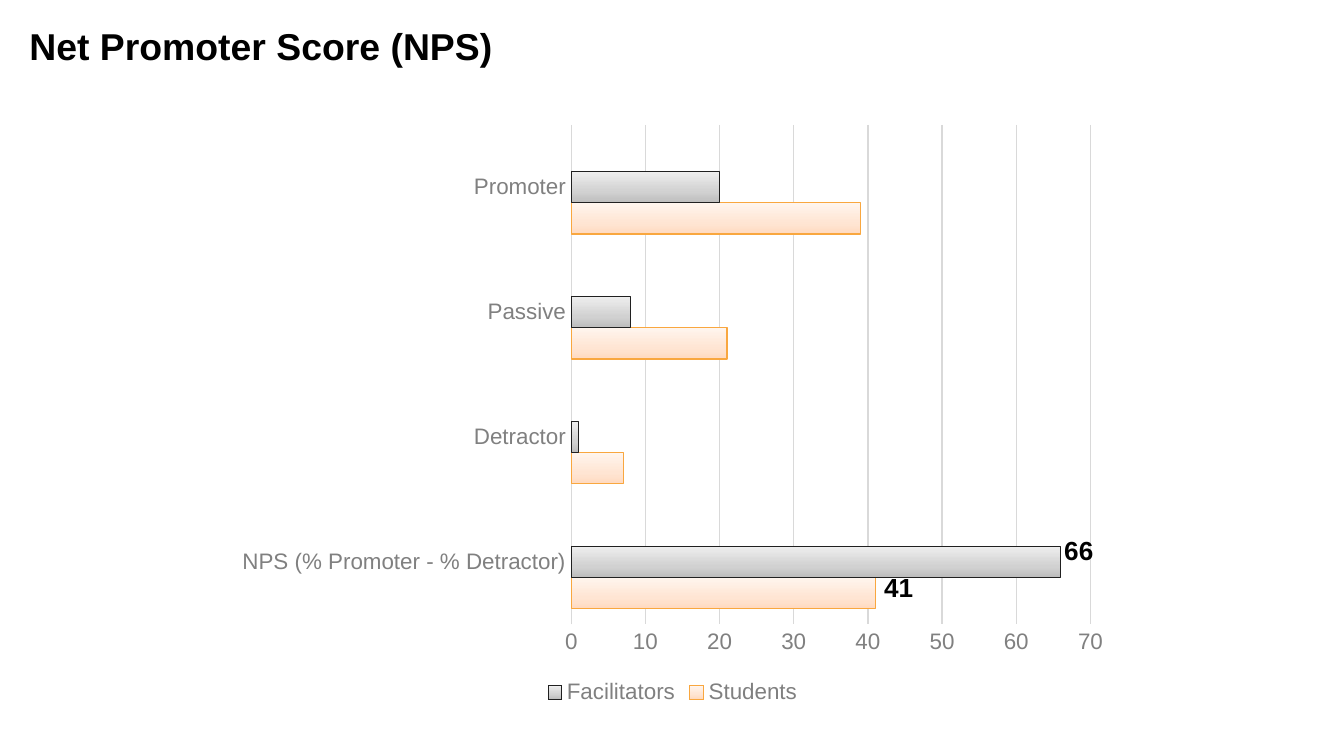
from copy import deepcopy
from dataclasses import dataclass

from pptx import Presentation
from pptx.chart.chart import Chart
from pptx.chart.data import CategoryChartData
from pptx.chart.series import BarSeries
from pptx.dml.color import RGBColor
from pptx.enum.chart import XL_CHART_TYPE as ChartType
from pptx.enum.chart import XL_LEGEND_POSITION as LegendPosition
from pptx.enum.chart import XL_TICK_MARK as TickMark
from pptx.oxml import parse_xml
from pptx.oxml.ns import nsdecls, qn
from pptx.slide import Slide
from pptx.text.text import Font
from pptx.util import Inches, Pt

FONT = "Arial"
BLACK = RGBColor(0x00, 0x00, 0x00)
GRAY = RGBColor(0x80, 0x80, 0x80)
GRID = RGBColor(0xD9, 0xD9, 0xD9)
PEACH = (RGBColor(0xFF, 0xDA, 0xC0), RGBColor(0xFF, 0xE5, 0xD3), RGBColor(0xFF, 0xF5, 0xEE))
ORANGE = RGBColor(0xF9, 0xA7, 0x3F)
SILVER = (RGBColor(0xBD, 0xBD, 0xBD), RGBColor(0xD1, 0xD1, 0xD1), RGBColor(0xEE, 0xEE, 0xEE))
CHARCOAL = RGBColor(0x20, 0x20, 0x20)
PALE_BLUE = (RGBColor(0xC0, 0xD4, 0xE0), RGBColor(0xD3, 0xE0, 0xE8), RGBColor(0xEE, 0xF3, 0xF7))
SLATE = RGBColor(0x75, 0x8D, 0x99)
STOP_POSITIONS = (0, 0.35, 1)


@dataclass
class Group:
    name: str
    values: tuple[int | None, ...]
    shades: tuple[RGBColor, ...]
    outline: RGBColor


@dataclass
class Label:
    text: str
    left: float
    top: float
    width: float
    height: float
    size: int
    inset: float
    wrap: bool


CATEGORIES = ("NPS (% Promoter - % Detractor)", "Detractor", "Passive", "Promoter")
# The last group is empty and keeps a free slot above each pair of bars
GROUPS = (
    Group("Students", (41, 7, 21, 39), PEACH, ORANGE),
    Group("Facilitators", (66, 1, 8, 20), SILVER, CHARCOAL),
    Group("Column1", (None,) * 4, PALE_BLUE, SLATE),
)
LABELS = (
    Label("Net Promoter Score (NPS)", 0.12, 0.07, 3.71, 0.6, 20, 0.1, True),
    Label("41", 6.48, 4.2, 0.42, 0.34, 14, 0.05, False),
    Label("66", 7.82, 3.93, 0.42, 0.34, 14, 0.05, False),
)


def style_font(font: Font, size: int, color: RGBColor, bold: bool = False) -> None:
    font.name = FONT
    font.size = Pt(size)
    font.bold = bold
    font.color.rgb = color


def style_bars(series: BarSeries, group: Group) -> None:
    fill = series.format.fill
    fill.gradient()
    fill.gradient_angle = 90
    stop_list = series._element.find(".//" + qn("a:gsLst"))
    stop_list.append(deepcopy(stop_list[0]))
    for stop, position, shade in zip(fill.gradient_stops, STOP_POSITIONS, group.shades):
        stop.position = position
        stop.color.rgb = shade
    series.format.line.color.rgb = group.outline
    series.format.line.width = Pt(0.75)


def style_axes(chart: Chart) -> None:
    for axis in (chart.category_axis, chart.value_axis):
        axis.major_tick_mark = axis.minor_tick_mark = TickMark.NONE
        style_font(axis.tick_labels.font, 12, GRAY)
    values = chart.value_axis
    values.minimum_scale, values.maximum_scale, values.major_unit = 0, 70, 10
    values.has_major_gridlines = True
    values.format.line.fill.background()
    for line in (chart.category_axis.format.line, values.major_gridlines.format.line):
        line.color.rgb = GRID
        line.width = Pt(0.75)


def add_legend(chart: Chart) -> None:
    chart.has_legend = True
    legend = chart.legend
    legend.position = LegendPosition.BOTTOM
    legend.include_in_layout = False
    style_font(legend.font, 12, GRAY)
    # Horizontal bars list their entries in reverse, so 0 is the empty group
    hidden = parse_xml(
        f'<c:legendEntry {nsdecls("c")}><c:idx val="0"/><c:delete val="1"/></c:legendEntry>'
    )
    legend._element.find(qn("c:legendPos")).addnext(hidden)


def add_score_chart(page: Slide) -> None:
    data = CategoryChartData()
    data.categories = CATEGORIES
    for group in GROUPS:
        data.add_series(group.name, group.values)
    chart = page.shapes.add_chart(
        ChartType.BAR_CLUSTERED, Inches(1.67), Inches(0.84), Inches(6.67), Inches(4.44), data
    ).chart
    chart.has_title = False
    style_font(chart.font, 10, BLACK)
    plot = chart.plots[0]
    plot.gap_width = 100
    plot.vary_by_categories = False
    for series, group in zip(plot.series, GROUPS):
        style_bars(series, group)
    style_axes(chart)
    add_legend(chart)


def add_label(page: Slide, label: Label) -> None:
    box = page.shapes.add_textbox(
        Inches(label.left), Inches(label.top), Inches(label.width), Inches(label.height)
    )
    frame = box.text_frame
    frame.word_wrap = label.wrap
    frame.margin_left = frame.margin_right = Inches(0.1)
    frame.margin_top = frame.margin_bottom = Inches(label.inset)
    frame.text = label.text
    style_font(frame.paragraphs[0].runs[0].font, label.size, BLACK, bold=True)


def main() -> None:
    deck = Presentation()
    # Widescreen page, 16 to 9
    deck.slide_width = Inches(10)
    deck.slide_height = Inches(10 * 9 / 16)
    page = deck.slides.add_slide(deck.slide_layouts[6])
    # Chart first, then the title and the two score labels over it
    add_score_chart(page)
    for label in LABELS:
        add_label(page, label)
    deck.save("out.pptx")


if __name__ == "__main__":
    main()
